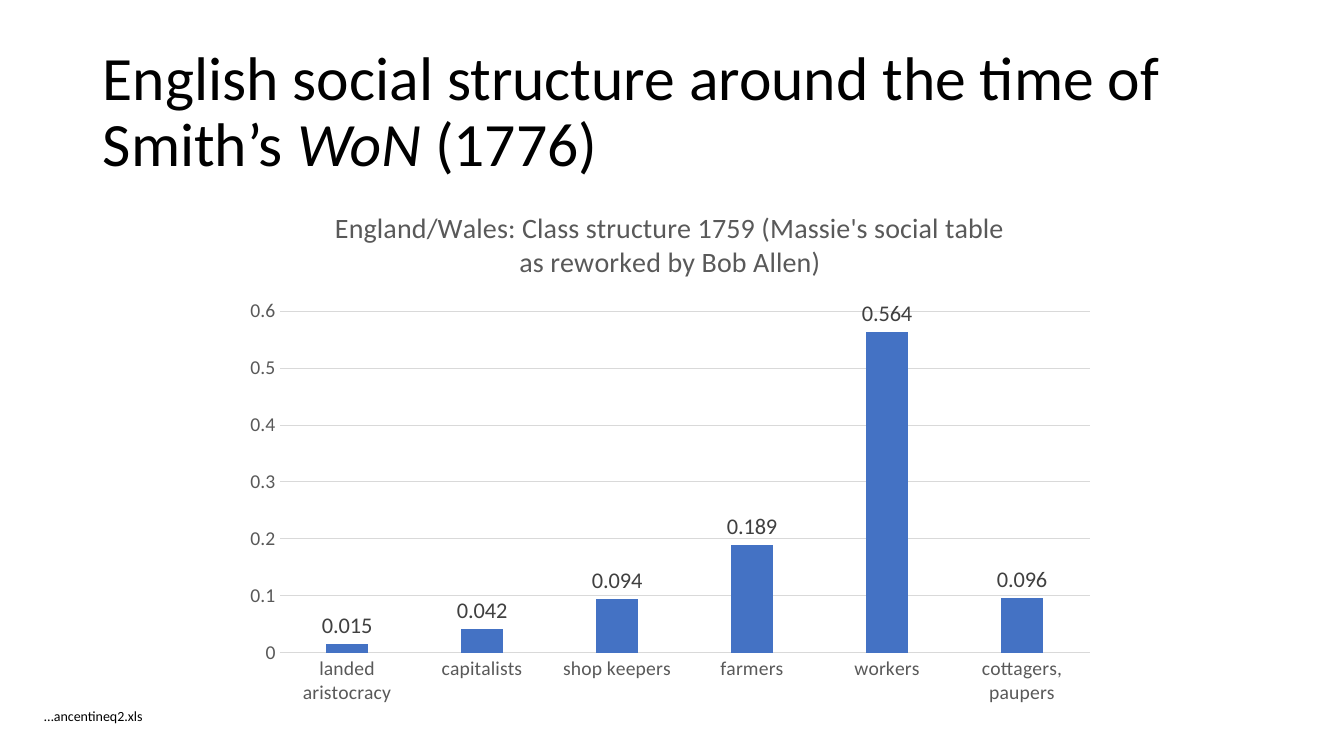
from pptx import Presentation
from pptx.chart.data import CategoryChartData
from pptx.dml.color import RGBColor
from pptx.enum.chart import XL_CHART_TYPE, XL_LABEL_POSITION, XL_TICK_MARK
from pptx.enum.text import MSO_ANCHOR, PP_ALIGN
from pptx.util import Inches, Pt

FONT = "Calibri"
BLACK = RGBColor(0x00, 0x00, 0x00)
DARK_GRAY = RGBColor(0x40, 0x40, 0x40)
GRAY = RGBColor(0x59, 0x59, 0x59)
LIGHT_GRAY = RGBColor(0xD9, 0xD9, 0xD9)
BLUE = RGBColor(0x44, 0x72, 0xC4)

CLASS_SHARES = {
    "landed aristocracy": 0.015,
    "capitalists": 0.042,
    "shop keepers": 0.094,
    "farmers": 0.189,
    "workers": 0.564,
    "cottagers, paupers": 0.096,
}


def style_font(font, size, color):
    font.name = FONT
    font.size = Pt(size)
    font.bold = False
    font.color.rgb = color


def style_line(line):
    line.color.rgb = LIGHT_GRAY
    line.width = Pt(0.75)


def place(shape, left, top, width, height):
    shape.left, shape.top = Inches(left), Inches(top)
    shape.width, shape.height = Inches(width), Inches(height)


def add_heading(slide):
    heading = slide.shapes.title
    place(heading, 0.92, 0.4, 11.5, 1.45)
    frame = heading.text_frame
    frame.vertical_anchor = MSO_ANCHOR.MIDDLE
    line = frame.paragraphs[0]
    line.alignment = PP_ALIGN.LEFT
    line.line_spacing = 0.9
    for text, italic in (
        ("English social structure around the time of Smith’s ", False),
        ("WoN ", True),
        ("(1776)", False),
    ):
        run = line.add_run()
        run.text = text
        style_font(run.font, 44, BLACK)
        run.font.italic = italic


def add_class_chart(slide):
    shares = CategoryChartData()
    shares.categories = list(CLASS_SHARES)
    shares.add_series("Series 1", list(CLASS_SHARES.values()))
    chart = slide.shapes.add_chart(
        XL_CHART_TYPE.COLUMN_CLUSTERED,
        Inches(2.31), Inches(1.85), Inches(8.67), Inches(5.25), shares,
    ).chart
    style_font(chart.font, 10, BLACK)
    chart.has_legend = False

    # Chart title
    chart.has_title = True
    caption = chart.chart_title.text_frame
    caption.text = "England/Wales: Class structure 1759 (Massie's social table as reworked by Bob Allen)"
    style_font(caption.paragraphs[0].runs[0].font, 20, GRAY)
    chart.chart_title.include_in_layout = False

    # Axes and gridlines
    for axis in (chart.category_axis, chart.value_axis):
        axis.major_tick_mark = XL_TICK_MARK.NONE
        axis.minor_tick_mark = XL_TICK_MARK.NONE
        style_font(axis.tick_labels.font, 14, GRAY)
    style_line(chart.category_axis.format.line)
    chart.value_axis.format.line.fill.background()
    chart.value_axis.has_major_gridlines = True
    style_line(chart.value_axis.major_gridlines.format.line)

    # Columns and their values
    columns = chart.plots[0]
    columns.gap_width = 219
    columns.overlap = -27
    columns.vary_by_categories = False
    share_columns = columns.series[0]
    share_columns.format.fill.solid()
    share_columns.format.fill.fore_color.rgb = BLUE
    labels = share_columns.data_labels
    labels.show_value = True
    labels.position = XL_LABEL_POSITION.OUTSIDE_END
    style_font(labels.font, 16, DARK_GRAY)


def add_source_note(slide):
    note = slide.shapes.add_textbox(Inches(0.34), Inches(6.97), Inches(2.25), Inches(0.27))
    note.text_frame.word_wrap = True
    note.text_frame.text = "…ancentineq2.xls"
    style_font(note.text_frame.paragraphs[0].runs[0].font, 10, BLACK)


def main():
    prs = Presentation()
    prs.slide_width, prs.slide_height = Inches(13.33), Inches(7.5)
    slide = prs.slides.add_slide(prs.slide_layouts[5])
    add_heading(slide)
    add_class_chart(slide)
    add_source_note(slide)
    prs.save("out.pptx")


if __name__ == "__main__":
    main()
